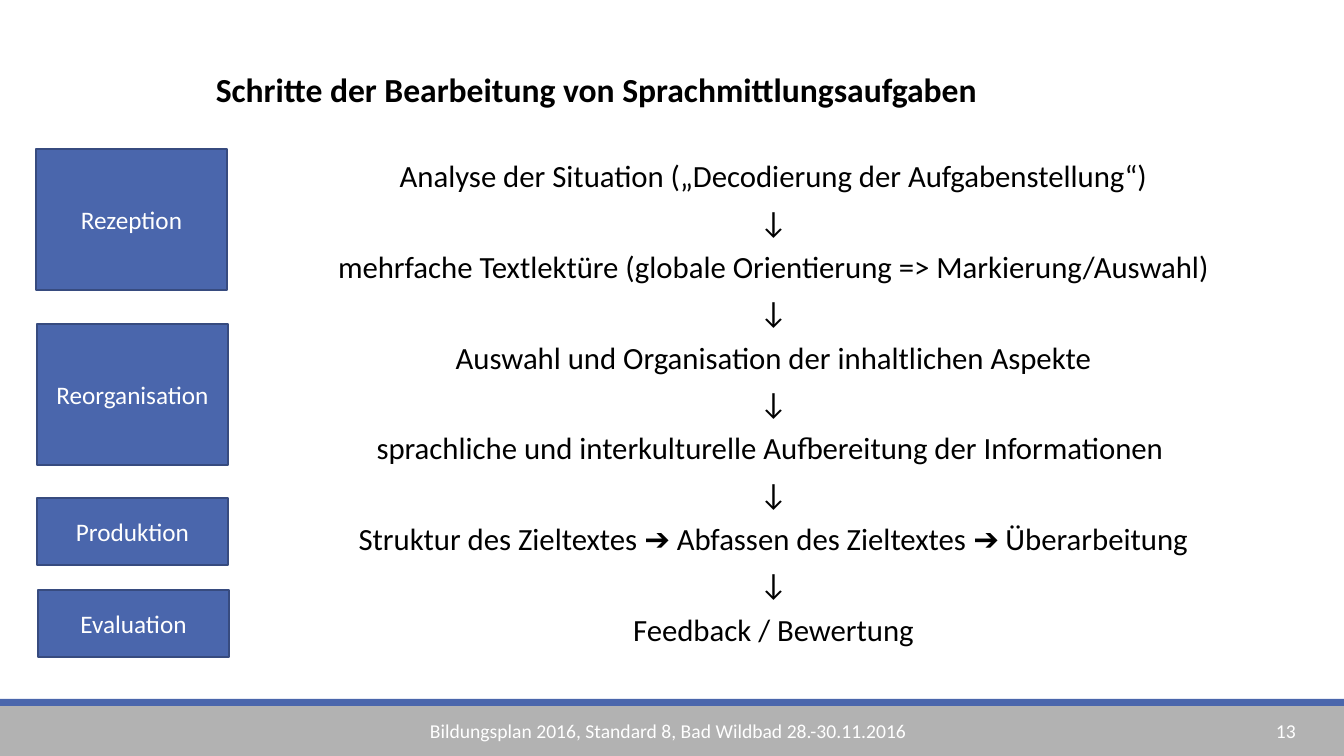
from dataclasses import dataclass

from pptx import Presentation
from pptx.dml.color import RGBColor
from pptx.enum.shapes import MSO_SHAPE
from pptx.enum.text import MSO_ANCHOR, PP_ALIGN
from pptx.util import Emu, Pt

EMU_PER_PX = 914400 / 100.8


def px(length):
    return Emu(round(length * EMU_PER_PX))


@dataclass(frozen=True)
class Theme:
    font: str = "Calibri"
    blue: RGBColor = RGBColor(0x4A, 0x66, 0xAC)
    dark_blue: RGBColor = RGBColor(0x37, 0x4B, 0x7F)
    gray: RGBColor = RGBColor(0xB2, 0xB2, 0xB2)
    black: RGBColor = RGBColor(0, 0, 0)
    white: RGBColor = RGBColor(255, 255, 255)
    title_size: int = 24
    step_size: int = 22
    phase_size: int = 18
    footer_size: int = 14
    outline: float = 1.25
    step_gap: int = 6


class SlideBuilder:
    def __init__(self, slide, theme):
        self.slide = slide
        self.theme = theme

    def set_text(self, text_frame, text, size, color, align, bold=False, gap=0):
        """Fill a text frame, one paragraph for each line of text."""
        text_frame.word_wrap = True
        text_frame.text = text
        for paragraph in text_frame.paragraphs:
            paragraph.alignment = align
            paragraph.space_after = Pt(gap)
            for run in paragraph.runs:
                run.font.name = self.theme.font
                run.font.size = Pt(size)
                run.font.bold = bold
                run.font.color.rgb = color

    def text(self, box, text, size, color, align=PP_ALIGN.CENTER, bold=False, gap=0):
        shape = self.slide.shapes.add_textbox(*map(px, box))
        self.set_text(shape.text_frame, text, size, color, align, bold, gap)

    def bar(self, box, color):
        shape = self.slide.shapes.add_shape(MSO_SHAPE.RECTANGLE, *map(px, box))
        shape.shadow.inherit = False
        shape.fill.solid()
        shape.fill.fore_color.rgb = color
        shape.line.fill.background()
        return shape

    def phase(self, box, label):
        theme = self.theme
        shape = self.bar(box, theme.blue)
        shape.line.color.rgb = theme.dark_blue
        shape.line.width = Pt(theme.outline)
        shape.text_frame.vertical_anchor = MSO_ANCHOR.MIDDLE
        self.set_text(shape.text_frame, label, theme.phase_size, theme.white, PP_ALIGN.CENTER)


STEPS = [
    "Analyse der Situation („Decodierung der Aufgabenstellung“)",
    "mehrfache Textlektüre (globale Orientierung => Markierung/Auswahl)",
    "Auswahl und Organisation der inhaltlichen Aspekte",
    "sprachliche und interkulturelle Aufbereitung der Informationen ",
    "Struktur des Zieltextes ➔ Abfassen des Zieltextes ➔ Überarbeitung",
    "Feedback / Bewertung",
]
PHASES = [
    ("Rezeption", (36, 149, 191, 141)),
    ("Reorganisation", (37, 324, 191, 141)),
    ("Produktion", (37, 498, 191, 67)),
    ("Evaluation", (38, 590, 191, 67)),
]
FOOTER = [
    ("Bildungsplan 2016, Standard 8, Bad Wildbad 28.-30.11.2016", (420, 714, 503, 34)),
    ("13", (1266, 714, 83, 34)),
]


def main():
    presentation = Presentation()
    presentation.slide_width, presentation.slide_height = px(1344), px(756)
    theme = Theme()
    slide = presentation.slides.add_slide(presentation.slide_layouts[6])
    builder = SlideBuilder(slide, theme)

    builder.bar((0, 706, 1344, 50), theme.gray)
    builder.bar((0, 699, 1344, 7), theme.blue)
    for label, box in FOOTER:
        builder.text(box, label, theme.footer_size, theme.white, PP_ALIGN.LEFT)

    builder.text((55, 64, 1083, 50), "Schritte der Bearbeitung von Sprachmittlungsaufgaben",
                 theme.title_size, theme.black, bold=True)
    builder.text((279, 152, 989, 506), "\n↓\n".join(STEPS),
                 theme.step_size, theme.black, gap=theme.step_gap)
    for label, box in PHASES:
        builder.phase(box, label)

    presentation.save("out.pptx")


if __name__ == "__main__":
    main()
